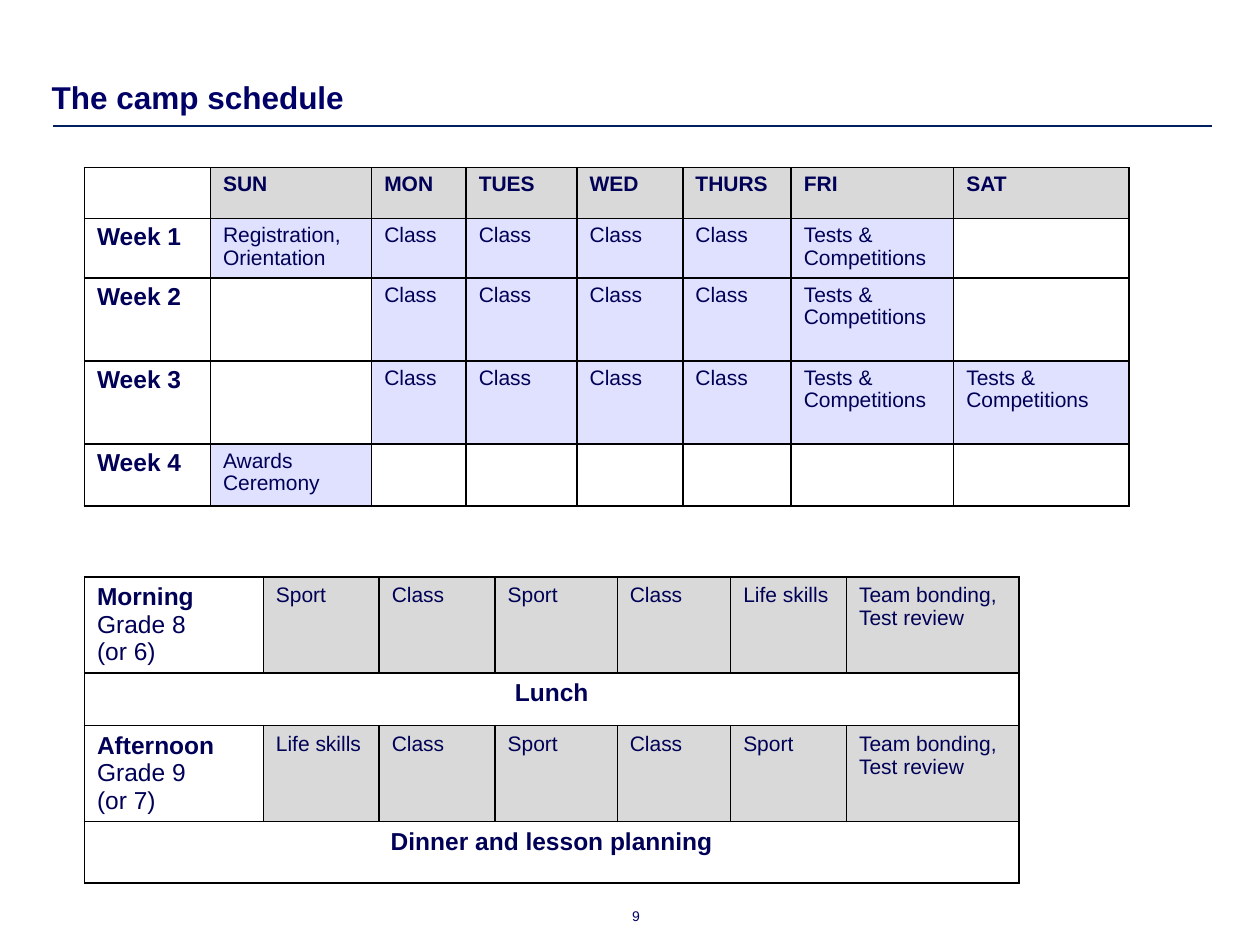
"""Builds the camp schedule slide with a weekly table and a daily table."""
from lxml import etree
from pptx import Presentation
from pptx.dml.color import RGBColor
from pptx.enum.shapes import MSO_CONNECTOR
from pptx.enum.text import MSO_ANCHOR, PP_ALIGN
from pptx.oxml.ns import qn
from pptx.util import Inches, Pt

STRAIGHT = MSO_CONNECTOR.STRAIGHT
BOTTOM = MSO_ANCHOR.BOTTOM
LEFT, CENTER, RIGHT = PP_ALIGN.LEFT, PP_ALIGN.CENTER, PP_ALIGN.RIGHT

THEME = {
    "font": "Arial",
    "title": "000066", "text": "000056", "rule": "002060", "border": "000000",
    "blank": "FFFFFF", "grey": "D9D9D9", "lilac": "E0E0FF",
    "title_size": 18, "label_size": 14, "cell_size": 12, "number_size": 8,
}


def write(frame, text, size, color="text", bold=False, align=LEFT, spacing=1.0, bold_lines=None):
    for index, line in enumerate(text.split("\n")):
        paragraph = frame.paragraphs[0] if index == 0 else frame.add_paragraph()
        paragraph.alignment = align
        paragraph.line_spacing = spacing
        run = paragraph.add_run()
        run.text = line
        strong = bold if bold_lines is None else index < bold_lines
        font_format = {"name": THEME["font"], "size": Pt(THEME[size]), "bold": strong}
        for attribute, value in font_format.items():
            setattr(run.font, attribute, value)
        run.font.color.rgb = RGBColor.from_string(THEME[color])


def style_cell(cell, fill):
    properties = cell._tc.get_or_add_tcPr()
    for side in ("a:lnL", "a:lnR", "a:lnT", "a:lnB"):
        border = etree.SubElement(properties, qn(side), w=str(Pt(0.96)))
        solid = etree.SubElement(border, qn("a:solidFill"))
        etree.SubElement(solid, qn("a:srgbClr"), val=THEME["border"])
    cell.fill.solid()
    cell.fill.fore_color.rgb = RGBColor.from_string(THEME[fill])


presentation = Presentation()
presentation.slide_width, presentation.slide_height = Inches(10), Inches(7.5)
slide = presentation.slides.add_slide(presentation.slide_layouts[5])

title = slide.shapes.title
title_box = {"left": 0.36, "top": 0.54, "width": 8.63, "height": 0.39}
for attribute, value in title_box.items():
    setattr(title, attribute, Inches(value))
title_format = {
    "vertical_anchor": BOTTOM, "word_wrap": True,
    "margin_left": Inches(0.05), "margin_right": Inches(0.05),
    "margin_top": 0, "margin_bottom": 0,
}
for attribute, value in title_format.items():
    setattr(title.text_frame, attribute, value)
write(title.text_frame, "The camp schedule", "title_size", "title", True, spacing=0.95)

rule = slide.shapes.add_connector(STRAIGHT, Inches(0.42), Inches(1), Inches(9.62), Inches(1))
rule.line.color.rgb = RGBColor.from_string(THEME["rule"])
rule.line.width = Pt(1.5)
etree.SubElement(rule._element.spPr, qn("a:effectLst"))

tests = "Tests & Competitions"
classes = ["Class"] * 4
team = "Team bonding,\nTest review"
schedules = [
    {
        "top": 1.33, "spacing": 0.95, "header": True, "fill": "lilac",
        "columns": [1, 1.28, 0.75, 0.88, 0.84, 0.86, 1.29, 1.39],
        "heights": [0.38, 0.47, 0.66, 0.66, 0.49],
        "rows": [
            ["", "SUN", "MON", "TUES", "WED", "THURS", "FRI", "SAT"],
            ["Week 1", "Registration,\nOrientation", *classes, tests, ""],
            ["Week 2", "", *classes, tests, ""],
            ["Week 3", "", *classes, tests, tests],
            ["Week 4", "Awards Ceremony"] + [""] * 6,
        ],
    },
    {
        "top": 4.58, "spacing": 1.0, "header": False, "fill": "grey",
        "columns": [1.42, 0.92, 0.92, 0.97, 0.9, 0.92, 1.37],
        "heights": [0.76, 0.42, 0.76, 0.49],
        "rows": [
            ["Morning\nGrade 8\n(or 6)", "Sport", "Class", "Sport", "Class", "Life skills", team],
            ["Lunch"],
            ["Afternoon\nGrade 9\n(or 7)", "Life skills", "Class", "Sport", "Class", "Sport", team],
            ["Dinner and lesson planning"],
        ],
    },
]

for schedule in schedules:
    widths, heights = schedule["columns"], schedule["heights"]
    grid = slide.shapes.add_table(
        len(heights), len(widths), Inches(0.67), Inches(schedule["top"]),
        Inches(sum(widths)), Inches(sum(heights))).table
    grid.first_row = grid.horz_banding = False
    for column, width in zip(grid.columns, widths):
        column.width = Inches(width)
    for row_index, entries in enumerate(schedule["rows"]):
        grid.rows[row_index].height = Inches(heights[row_index])
        is_header = schedule["header"] and row_index == 0
        is_break = len(entries) == 1
        if is_break:
            grid.cell(row_index, 0).merge(grid.cell(row_index, len(widths) - 1))
        for column_index in range(len(widths)):
            cell = grid.cell(row_index, column_index)
            entry = entries[column_index] if column_index < len(entries) else ""
            is_label = column_index == 0
            fill = "grey" if is_header else schedule["fill"]
            style_cell(cell, fill if entry and not is_label else "blank")
            if entry:
                write(cell.text_frame, entry, "label_size" if is_label else "cell_size",
                      bold=is_header, align=CENTER if is_break else LEFT,
                      spacing=schedule["spacing"], bold_lines=1 if is_label else None)

page_number = slide.shapes.add_textbox(Inches(4.08), Inches(7.21), Inches(1), Inches(0.13)).text_frame
page_number.word_wrap = True
for margin in ("margin_left", "margin_right", "margin_top", "margin_bottom"):
    setattr(page_number, margin, 0)
write(page_number, "9", "number_size", "title", align=RIGHT, spacing=0.95)

presentation.save("out.pptx")
